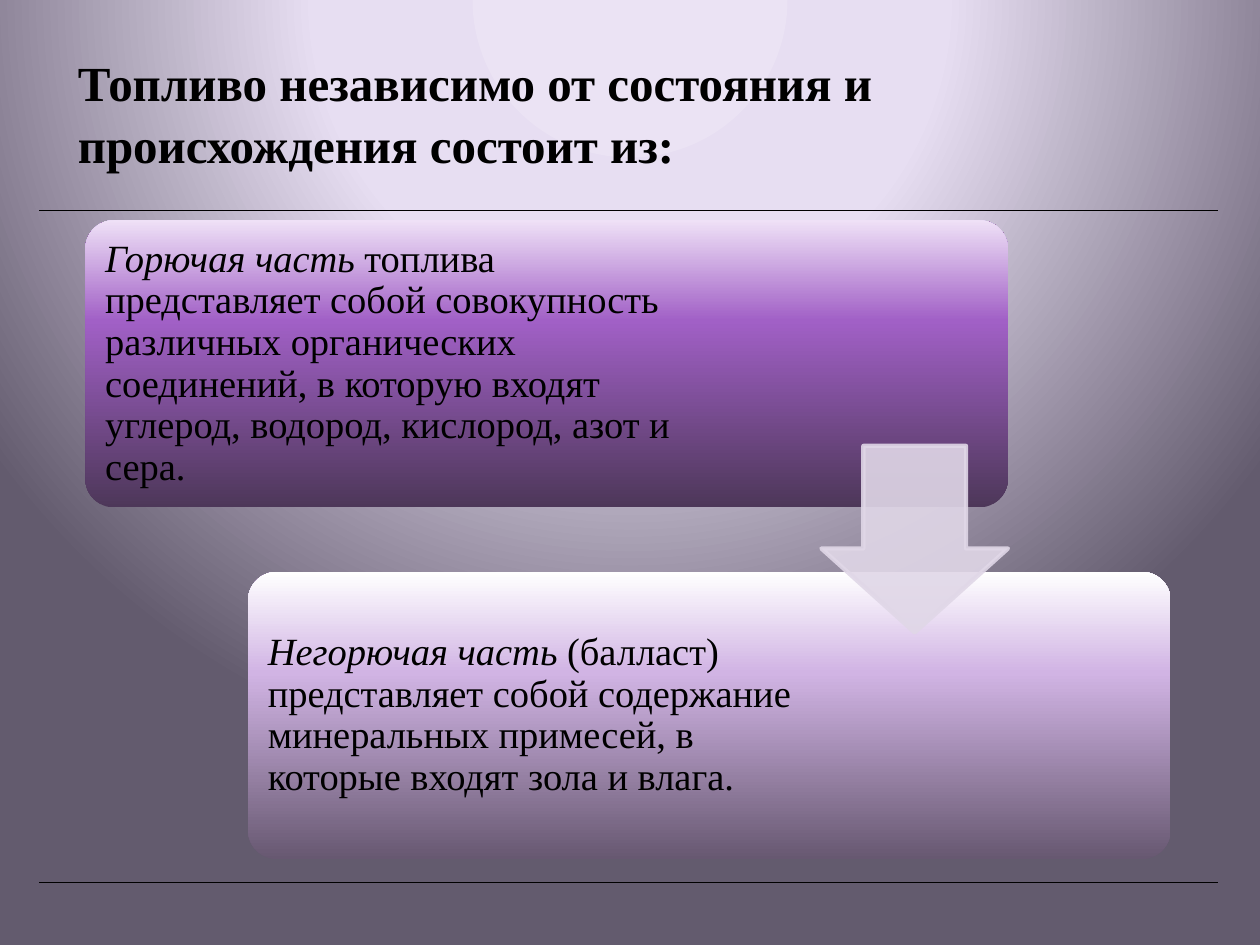
"""Build a slide on the two components of fuel."""
from dataclasses import dataclass

from lxml import etree
from pptx import Presentation
from pptx.dml.color import RGBColor
from pptx.enum.shapes import MSO_CONNECTOR, MSO_SHAPE
from pptx.enum.text import MSO_ANCHOR
from pptx.oxml.ns import qn
from pptx.util import Cm, Pt

STRAIGHT = MSO_CONNECTOR.STRAIGHT
ROUNDED = MSO_SHAPE.ROUNDED_RECTANGLE
DOWN_ARROW = MSO_SHAPE.DOWN_ARROW
MIDDLE, BOTTOM = MSO_ANCHOR.MIDDLE, MSO_ANCHOR.BOTTOM

BLACK = RGBColor(0x00, 0x00, 0x00)
ARROW_LILAC = RGBColor(0xE0, 0xD7, 0xE7)
PAGE_STOPS = (
    (0, RGBColor(0xEB, 0xE3, 0xF4)),
    (40, RGBColor(0xE7, 0xDE, 0xF2)),
    (100, RGBColor(0x63, 0x5B, 0x6E)),
)
VIOLET_STOPS = (
    (0, RGBColor(0x4D, 0x37, 0x59)),
    (65, RGBColor(0xA1, 0x60, 0xC6)),
    (100, RGBColor(0xEF, 0xE1, 0xF7)),
)
PALE_STOPS = (
    (0, RGBColor(0x67, 0x58, 0x71)),
    (65, RGBColor(0xD1, 0xB4, 0xE4)),
    (100, RGBColor(0xFF, 0xFF, 0xFF)),
)

FONT = "Times New Roman"
CARD_WIDTH, CARD_HEIGHT = 18.6, 5.79
CARD_PADDING = 0.17


@dataclass(frozen=True)
class Span:
    text: str
    bold: bool = False
    italic: bool = False


@dataclass(frozen=True)
class Card:
    left: float
    top: float
    text_width: float
    stops: tuple
    spans: tuple


CARDS = (
    Card(1.72, 4.44, 12.6, VIOLET_STOPS, (
        Span("Горючая часть ", italic=True),
        Span("топлива представляет собой совокупность различных органических "
             "соединений, в которую входят углерод, водород, кислород, азот и сера."),
    )),
    Card(5.0, 11.53, 11.2, PALE_STOPS, (
        Span("Негорючая часть", italic=True),
        Span(" (балласт) представляет собой содержание минеральных примесей, "
             "в которые входят зола и влага."),
    )),
)


def set_stops(gradient, stops: tuple):
    """Replace the colour stops and remove the old direction of a gradient."""
    for child in list(gradient):
        gradient.remove(child)
    stop_list = etree.SubElement(gradient, qn("a:gsLst"))
    for percent, color in stops:
        stop = etree.SubElement(stop_list, qn("a:gs"), pos=str(percent * 1000))
        etree.SubElement(stop, qn("a:srgbClr"), val=str(color))


def paint_background(page):
    """Fill the page with a circular gradient centred above its top edge."""
    page.background.fill.gradient()
    gradient = page.element.find(".//" + qn("a:gradFill"))
    set_stops(gradient, PAGE_STOPS)
    circle = etree.SubElement(gradient, qn("a:path"), path="circle")
    etree.SubElement(circle, qn("a:fillToRect"),
                     l="50000", t="-80000", r="50000", b="180000")


def add_rule(page, top: float):
    """Draw a thin line across the page."""
    rule = page.shapes.add_connector(STRAIGHT, Cm(0.79), Cm(top), Cm(24.56), Cm(top))
    rule.line.color.rgb = BLACK
    rule.line.width = Pt(0.25)
    etree.SubElement(rule.element.spPr, qn("a:effectLst"))


def add_text(page, left: float, top: float, width: float, height: float,
             spans: tuple, size: float, anchor, spacing: float):
    """Add a wrapped text box with one paragraph and return its frame."""
    box = page.shapes.add_textbox(Cm(left), Cm(top), Cm(width), Cm(height))
    frame = box.text_frame
    frame.word_wrap = True
    frame.vertical_anchor = anchor
    para = frame.paragraphs[0]
    para.line_spacing = spacing
    for span in spans:
        run = para.add_run()
        run.text = span.text
        run.font.name = FONT
        run.font.size = Pt(size)
        run.font.bold = span.bold
        run.font.italic = span.italic
        run.font.color.rgb = BLACK
    return frame


def add_card(page, card: Card):
    """Draw a rounded gradient panel with its text."""
    panel = page.shapes.add_shape(ROUNDED, Cm(card.left), Cm(card.top),
                                  Cm(CARD_WIDTH), Cm(CARD_HEIGHT))
    panel.adjustments[0] = 0.1
    panel.shadow.inherit = False
    panel.line.fill.background()
    panel.fill.gradient()
    gradient = panel.element.spPr.find(qn("a:gradFill"))
    set_stops(gradient, card.stops)
    etree.SubElement(gradient, qn("a:lin"), ang="16200000", scaled="0")
    frame = add_text(page, card.left + CARD_PADDING, card.top + CARD_PADDING,
                     card.text_width, CARD_HEIGHT - 2 * CARD_PADDING,
                     card.spans, 22, MIDDLE, 0.9)
    frame.margin_left = frame.margin_right = Cm(0.23)
    frame.margin_top = frame.margin_bottom = Cm(0.23)


def add_arrow(page):
    """Draw the translucent arrow that joins the cards."""
    arrow = page.shapes.add_shape(DOWN_ARROW, Cm(16.56), Cm(8.99), Cm(3.76), Cm(3.76))
    arrow.adjustments[0] = 0.55
    arrow.adjustments[1] = 0.45
    arrow.shadow.inherit = False
    arrow.fill.solid()
    arrow.fill.fore_color.rgb = ARROW_LILAC
    arrow.line.color.rgb = ARROW_LILAC
    arrow.line.width = Pt(2.5)
    for color in arrow.element.spPr.iter(qn("a:srgbClr")):
        etree.SubElement(color, qn("a:alpha"), val="90000")


def main():
    """Build and save the deck."""
    deck = Presentation()
    deck.slide_width, deck.slide_height = Cm(25.4), Cm(19.05)
    page = deck.slides.add_slide(deck.slide_layouts[6])
    paint_background(page)
    for top in (4.24, 17.78):
        add_rule(page, top)
    title = Span("Топливо независимо от состояния и происхождения состоит из:", bold=True)
    add_text(page, 1.32, 0.74, 21.82, 2.87, (title,), 28, BOTTOM, 1.05)
    for card in CARDS:
        add_card(page, card)
    add_arrow(page)
    deck.save("out.pptx")


if __name__ == "__main__":
    main()
